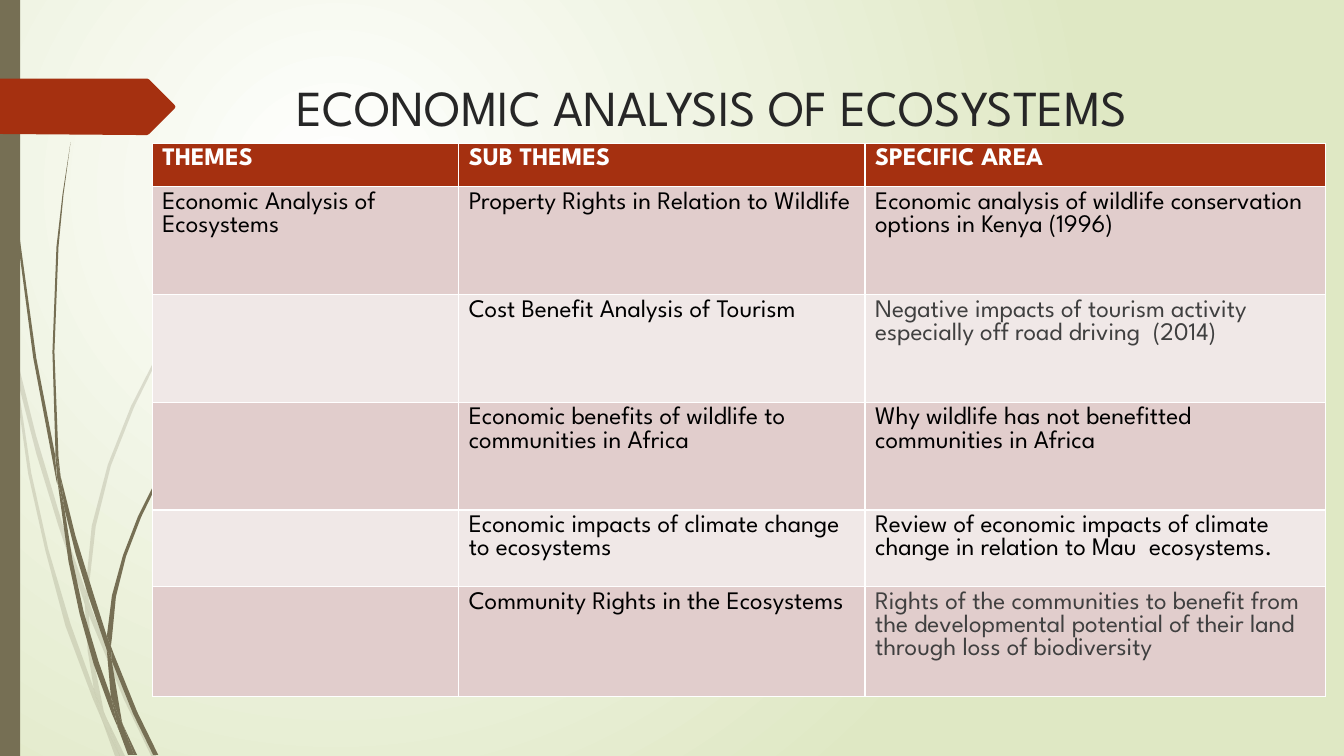
from lxml import etree
from pptx import Presentation
from pptx import util as u
from pptx.dml.color import RGBColor
from pptx.enum import shapes, text
from pptx.oxml.ns import qn

FONT = "League Spartan"
WHITE = RGBColor(0xFF, 0xFF, 0xFF)
BLACK = RGBColor(0, 0, 0)
CHARCOAL = RGBColor(0x26, 0x26, 0x26)
GREY = RGBColor(0x40, 0x40, 0x40)
PALE_GREEN = RGBColor(0xDF, 0xE8, 0xC4)
OLIVE = RGBColor(0x76, 0x6F, 0x54)
RUST = RGBColor(0xA5, 0x30, 0x10)
PINK = RGBColor(0xE1, 0xCD, 0xCC)
LIGHT_PINK = RGBColor(0xF0, 0xE8, 0xE7)

# Outlines of the grass blades, in inches
PALE_GRASS = [
    [(0.11, 3.5), (0.09, 3.22), (0, 2.82), (0, 2.99), (0.1, 3.44)],
    [(0.58, 5.22), (0.84, 5.99), (0.85, 5.86), (0.62, 5.2), (0.36, 4.33), (0.14, 3.45),
     (0.17, 3.76), (0.36, 4.5)],
    [(0.92, 6.07), (0.88, 5.96), (0.88, 6.1), (1.23, 6.94), (1.5, 7.5), (1.55, 7.5),
     (1.27, 6.92)],
    [(1.19, 7.5), (1.24, 7.5), (1.05, 7.11)],
    [(0.93, 6.83), (0.7, 6.19), (0.48, 5.45), (0.31, 4.69), (0.17, 3.76), (0.11, 3.5),
     (0.28, 4.7), (0.45, 5.46), (0.65, 6.21), (0.92, 6.93), (1.01, 7.14), (0.99, 7.07)],
    [(0.84, 5.99), (0.87, 6.46), (0.93, 6.83), (0.96, 6.92), (1.05, 7.11), (1.03, 7.06),
     (0.91, 6.46), (0.88, 6.1), (0.88, 6.08)],
    [(0.88, 5.84), (0.95, 5.22), (1.1, 4.62), (1.33, 4.04), (1.6, 3.49), (1.93, 2.95),
     (2.29, 2.45), (2.68, 1.98), (2.9, 1.75), (3.12, 1.54), (3.12, 1.53), (2.89, 1.75),
     (2.68, 1.97), (2.28, 2.44), (1.91, 2.94), (1.58, 3.48), (1.3, 4.03), (1.07, 4.61),
     (0.91, 5.22), (0.85, 5.84), (0.85, 5.86), (0.88, 5.96)],
    [(1.01, 7.14), (1.14, 7.5), (1.19, 7.5)],
    [(0.88, 6.08), (0.88, 6.1), (0.88, 5.96), (0.85, 5.86), (0.84, 5.99)],
    [(0.96, 6.92), (0.93, 6.83), (0.99, 7.07), (1.01, 7.14), (1.19, 7.5), (1.05, 7.11)],
]
DARK_GRASS = [
    [(0.07, 1.1), (0.17, 2.33), (0.33, 3.55), (0.56, 4.77), (0.57, 4.81), (0.55, 4.57),
     (0.55, 4.53), (0.36, 3.55), (0.19, 2.32), (0.08, 1.09), (0.05, 0.48), (0.04, 0),
     (0.03, 0), (0.04, 0.48)],
    [(0.88, 5.92), (1.06, 6.45), (1.06, 6.31), (0.93, 5.9), (0.75, 5.32), (0.6, 4.72),
     (0.64, 5.05), (0.75, 5.49)],
    [(1.13, 6.49), (1.1, 6.41), (1.11, 6.56), (1.32, 7.08), (1.52, 7.49), (1.57, 7.49),
     (1.36, 7.06)],
    [(1.1, 6.91), (0.98, 6.57), (0.83, 6.07), (0.72, 5.56), (0.64, 5.05), (0.57, 4.77),
     (0.68, 5.57), (0.79, 6.09), (0.93, 6.59), (1.11, 7.08), (1.17, 7.22), (1.16, 7.17)],
    [(0.6, 4.72), (0.58, 4.53), (0.54, 3.49), (0.58, 2.45), (0.63, 1.93), (0.7, 1.41),
     (0.62, 1.93), (0.56, 2.45), (0.52, 3.49), (0.55, 4.49)],
    [(1.33, 7.49), (1.36, 7.49), (1.22, 7.19)],
    [(0.57, 4.77), (0.64, 5.05), (0.6, 4.72), (0.55, 4.49), (0.55, 4.53)],
    [(1.11, 6.33), (1.15, 5.92), (1.25, 5.52), (1.4, 5.13), (1.58, 4.76), (1.81, 4.4),
     (2.05, 4.06), (2.31, 3.74), (2.45, 3.59), (2.61, 3.44), (2.6, 3.44), (2.45, 3.58),
     (2.31, 3.73), (2.04, 4.05), (1.79, 4.39), (1.56, 4.74), (1.37, 5.12), (1.22, 5.51),
     (1.11, 5.91), (1.06, 6.31), (1.1, 6.41)],
    [(1.17, 7.22), (1.27, 7.49), (1.31, 7.49)],
    [(1.06, 6.45), (1.1, 6.91), (1.16, 7.06), (1.22, 7.19), (1.21, 7.16), (1.11, 6.56),
     (1.09, 6.51)],
    [(1.06, 6.45), (1.09, 6.51), (1.11, 6.56), (1.1, 6.41), (1.06, 6.31)],
    [(1.16, 7.06), (1.1, 6.91), (1.16, 7.17), (1.17, 7.22), (1.3, 7.49), (1.33, 7.49),
     (1.22, 7.19)],
]
ARROW = [(1.73, 1.08), (1.48, 1.33), (1.46, 1.34), (1.36, 1.34), (0, 1.33), (0, 0.78),
         (1.46, 0.78), (1.48, 0.79), (1.73, 1.04), (1.74, 1.06)]

COLUMN_WIDTHS = [3.04, 4.03, 4.57]
ROW_HEIGHTS = [0.43, 1.07, 1.07, 1.07, 0.76, 1.09]
ROWS = [
    ["THEMES", "SUB THEMES", "SPECIFIC AREA"],
    ["Economic Analysis of Ecosystems", "Property Rights in Relation to Wildlife",
     "Economic analysis of wildlife conservation options in Kenya (1996)"],
    ["", "Cost Benefit Analysis of Tourism",
     "Negative impacts of tourism activity especially off road driving  (2014)"],
    ["", "Economic benefits of wildlife to communities in Africa",
     "Why wildlife has not benefitted communities in Africa"],
    ["", "Economic impacts of climate change to ecosystems",
     "Review of economic impacts of climate change in relation to Mau  ecosystems."],
    ["", "Community Rights in the Ecosystems",
     "Rights of the communities to benefit from the developmental potential of their "
     "land through loss of biodiversity"],
]
GREY_CELLS = {(2, 2), (5, 2)}


def write(frame, content, size=18, color=BLACK, bold=False):
    paragraph = frame.paragraphs[0]
    paragraph.alignment = text.PP_ALIGN.LEFT
    run = paragraph.add_run()
    run.text = content
    run.font.name = FONT
    run.font.size = u.Pt(size)
    run.font.bold = bold
    run.font.color.rgb = color


class SlideBuilder:
    def __init__(self, presentation):
        self.slide = presentation.slides.add_slide(presentation.slide_layouts[5])

    def background(self, inner, outer):
        """Fill the slide with a radial gradient centred in its upper left."""
        fill = self.slide.background.fill
        fill.gradient()
        for stop, color in zip(fill.gradient_stops, (inner, outer)):
            stop.color.rgb = color
        gradient = self.slide.element.find(".//" + qn("a:gradFill"))
        gradient.remove(gradient.find(qn("a:lin")))
        radial = etree.SubElement(gradient, qn("a:path"), path="circle")
        etree.SubElement(radial, qn("a:fillToRect"),
                         l="50000", t="50000", r="100000", b="100000")

    def paint(self, shape, color, opacity=100):
        shape.shadow.inherit = False
        shape.fill.solid()
        shape.fill.fore_color.rgb = color
        shape.line.fill.background()
        if opacity < 100:
            solid = shape.element.spPr.find(qn("a:solidFill"))
            etree.SubElement(solid[0], qn("a:alpha"), val=str(opacity * 1000))

    def outline(self, points, color, opacity=100):
        corners = [(u.Inches(x), u.Inches(y)) for x, y in points]
        builder = self.slide.shapes.build_freeform(*corners[0])
        builder.add_line_segments(corners[1:], close=True)
        self.paint(builder.convert_to_shape(), color, opacity)

    def rectangle(self, left, top, width, height, color):
        box = [u.Inches(value) for value in (left, top, width, height)]
        self.paint(self.slide.shapes.add_shape(shapes.MSO_SHAPE.RECTANGLE, *box), color)

    def title(self, content, left, top, width, height):
        title = self.slide.shapes.title
        title.left, title.top = u.Inches(left), u.Inches(top)
        title.width, title.height = u.Inches(width), u.Inches(height)
        title.text_frame.vertical_anchor = text.MSO_ANCHOR.MIDDLE
        write(title.text_frame, content, size=36, color=CHARCOAL)

    def table(self, left, top):
        table = self.slide.shapes.add_table(
            len(ROWS), len(COLUMN_WIDTHS), u.Inches(left), u.Inches(top),
            u.Inches(sum(COLUMN_WIDTHS)), u.Inches(sum(ROW_HEIGHTS))).table
        for column, width in zip(table.columns, COLUMN_WIDTHS):
            column.width = u.Inches(width)
        for row, height in zip(table.rows, ROW_HEIGHTS):
            row.height = u.Inches(height)
        for i, row in enumerate(ROWS):
            header = i == 0
            for j, content in enumerate(row):
                cell = table.cell(i, j)
                cell.fill.solid()
                cell.fill.fore_color.rgb = RUST if header else PINK if i % 2 else LIGHT_PINK
                color = WHITE if header else GREY if (i, j) in GREY_CELLS else BLACK
                if content:
                    write(cell.text_frame, content, color=color, bold=header)


def main():
    presentation = Presentation()
    presentation.slide_width = u.Inches(13.33)
    presentation.slide_height = u.Inches(7.5)
    builder = SlideBuilder(presentation)
    builder.background(WHITE, PALE_GREEN)
    for blade in PALE_GRASS:
        builder.outline(blade, OLIVE, opacity=20)
    for blade in DARK_GRASS:
        builder.outline(blade, OLIVE)
    builder.rectangle(0, 0, 0.2, 7.5, OLIVE)
    builder.outline(ARROW, RUST)
    builder.title("ECONOMIC ANALYSIS OF ECOSYSTEMS", 2.84, 0.68, 9.75, 0.74)
    builder.table(1.51, 1.42)
    presentation.save("out.pptx")


if __name__ == "__main__":
    main()
